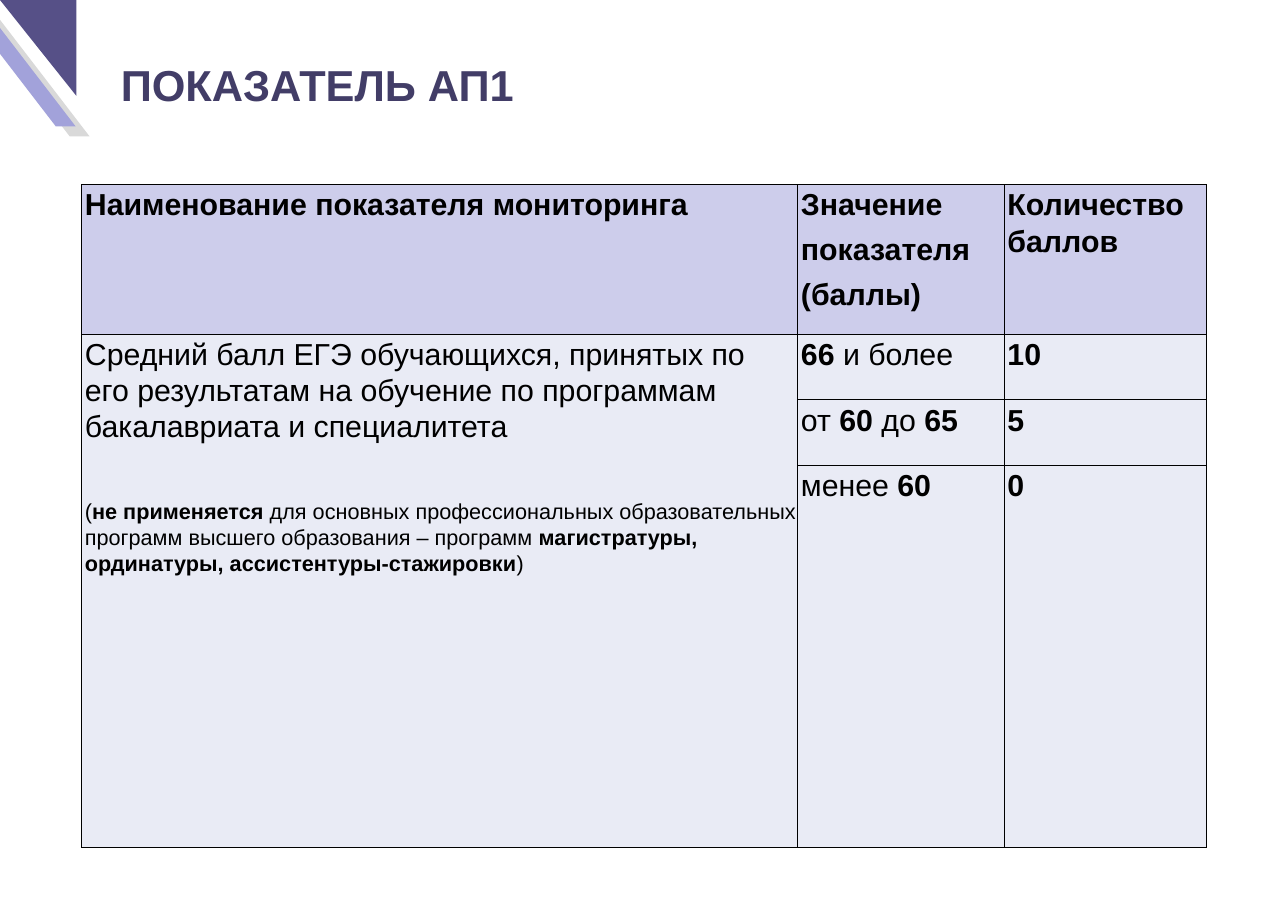
from dataclasses import dataclass

from lxml import etree
from pptx import Presentation
from pptx.dml.color import RGBColor
from pptx.enum.shapes import MSO_SHAPE
from pptx.enum.text import MSO_ANCHOR, MSO_AUTO_SIZE, PP_ALIGN
from pptx.oxml.ns import qn
from pptx.util import Inches, Pt

SLANT = MSO_SHAPE.PARALLELOGRAM
WEDGE = MSO_SHAPE.RIGHT_TRIANGLE
LEFT = PP_ALIGN.LEFT
MIDDLE, TOP = MSO_ANCHOR.MIDDLE, MSO_ANCHOR.TOP
FIXED = MSO_AUTO_SIZE.NONE


@dataclass
class Theme:
    font: str = "Arial"
    title: str = "423D67"
    text: str = "000000"
    head: str = "CDCDEB"
    body: str = "E9EBF5"
    gray: str = "D9D9D9"
    lilac: str = "A2A2DA"
    violet: str = "565087"
    big: int = 40
    mid: int = 28
    small: int = 20


theme = Theme()


def style(font, size, color):
    font.name = theme.font
    font.size = Pt(size)
    font.color.rgb = RGBColor.from_string(color)


def border(cell):
    props = cell._tc.get_or_add_tcPr()
    for side in ("lnL", "lnR", "lnT", "lnB"):
        line = etree.SubElement(props, qn(f"a:{side}"), w=str(Pt(1)))
        fill = etree.SubElement(line, qn("a:solidFill"))
        etree.SubElement(fill, qn("a:srgbClr"), val=theme.text)


deck = Presentation()
deck.slide_width, deck.slide_height = Inches(16.53), Inches(11.69)
slide = deck.slides.add_slide(deck.slide_layouts[5])

# Corner ornament
for kind, x, y, w, h, color in (
    (SLANT, -0.35, 0.13, 1.5, 1.62, theme.gray),
    (SLANT, -0.53, 0, 1.5, 1.62, theme.lilac),
    (WEDGE, 0, 0, 0.98, 1.23, theme.violet),
):
    shape = slide.shapes.add_shape(kind, Inches(x), Inches(y), Inches(w), Inches(h))
    shape.shadow.inherit = False
    shape.fill.solid()
    shape.fill.fore_color.rgb = RGBColor.from_string(color)
    shape.line.fill.background()
    if kind == SLANT:
        shape.adjustments[0] = 0.83
        shape._element.spPr.find(qn("a:xfrm")).set("flipH", "1")
    else:
        shape.rotation = 180

# Title
title = slide.shapes.title
title.left, title.top = Inches(1.55), Inches(0.7)
title.width, title.height = Inches(12.41), Inches(0.77)
frame = title.text_frame
frame.auto_size = FIXED
frame.vertical_anchor = MIDDLE
frame.margin_left = 0
frame.text = "ПОКАЗАТЕЛЬ АП1"
para = frame.paragraphs[0]
para.alignment = LEFT
para.font.bold = True
style(para.font, theme.big, theme.title)

# Table text: one list of paragraphs per cell, bold between asterisks
rows = [
    [
        ["*Наименование показателя мониторинга*"],
        ["*Значение*", "*показателя*", "*(баллы)*"],
        ["*Количество баллов*"],
    ],
    [
        [
            "Средний балл ЕГЭ обучающихся, принятых по его результатам "
            "на обучение по программам бакалавриата и специалитета",
            "(*не применяется *для основных профессиональных образовательных "
            "программ высшего образования – программ *магистратуры, "
            "ординатуры, ассистентуры-стажировки*)",
        ],
        ["*66* и более"],
        ["*10*"],
    ],
    [[], ["от *60* до *65*"], ["*5*"]],
    [[], ["менее *60*"], ["*0*"]],
]
widths = [9.19, 2.65, 2.6]
heights = [1.92, 0.84, 0.84, 4.91]

# Table grid
table = slide.shapes.add_table(
    len(rows), len(widths), Inches(1.05), Inches(2.37),
    Inches(sum(widths)), Inches(sum(heights)),
).table
table.first_row = table.horz_banding = False
for col, width in zip(table.columns, widths):
    col.width = Inches(width)
for row, height in zip(table.rows, heights):
    row.height = Inches(height)
table.cell(1, 0).merge(table.cell(3, 0))

# Table cells
for r, row in enumerate(rows):
    for c, lines in enumerate(row):
        cell = table.cell(r, c)
        border(cell)
        cell.fill.solid()
        cell.fill.fore_color.rgb = RGBColor.from_string(theme.body if r else theme.head)
        cell.vertical_anchor = TOP
        cell.margin_left = Inches(0.04)
        cell.margin_right = cell.margin_top = cell.margin_bottom = Inches(0.02)
        frame = cell.text_frame
        for n, line in enumerate(lines):
            para = frame.add_paragraph() if n else frame.paragraphs[0]
            para.line_spacing = 1.07
            para.space_after = Pt(8)
            note = line.startswith("(")
            if note:
                para.space_before = Pt(42)
            style(para.font, theme.small if note else theme.mid, theme.text)
            for i, part in enumerate(line.split("*")):
                if part:
                    run = para.add_run()
                    run.text = part
                    run.font.bold = i % 2 == 1

deck.save("out.pptx")
